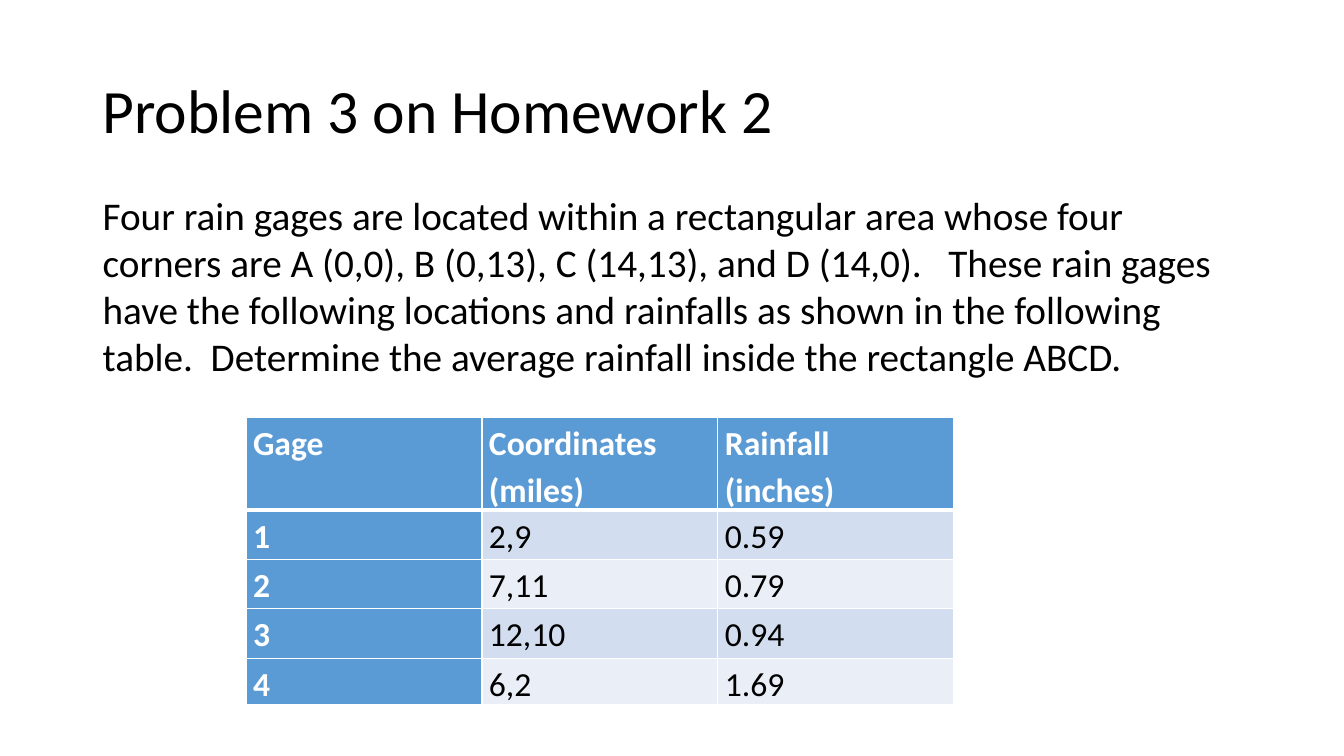
from dataclasses import dataclass

from lxml.etree import SubElement
from pptx import Presentation
from pptx.dml.color import RGBColor
from pptx.enum.text import MSO_ANCHOR as Anchor
from pptx.oxml.ns import qn
from pptx.slide import Slide
from pptx.table import _Cell as Cell
from pptx.text.text import _Paragraph as Paragraph
from pptx.util import Inches, Pt

FONT = "Calibri"
COLORS = {
    "text": "000000",
    "white": "FFFFFF",
    "header": "5B9BD5",
    "odd": "D2DEEF",
    "even": "EAEFF7",
}
GAGES = [
    ("Gage", "Coordinates (miles)", "Rainfall (inches)"),
    ("1", "2,9", "0.59"),
    ("2", "7,11", "0.79"),
    ("3", "12,10", "0.94"),
    ("4", "6,2", "1.69"),
]
COLUMN_WIDTH = 2.34
ROW_HEIGHTS = [0.92, 0.49, 0.49, 0.49, 0.46]


@dataclass
class TextBlock:
    words: str
    top: float
    height: float
    size: int
    anchor: Anchor
    line_spacing: float


BLOCKS = [
    TextBlock("Problem 3 on Homework 2", 0.4, 1.45, 44, Anchor.MIDDLE, 0.9),
    TextBlock(
        "Four rain gages are located within a rectangular area whose four "
        "corners are A (0,0), B (0,13), C (14,13), and D (14,0).   These rain "
        "gages have the following locations and rainfalls as shown in the "
        "following table.  Determine the average rainfall inside the "
        "rectangle ABCD.",
        1.85, 1.99, 28, Anchor.TOP, 1.0,
    ),
]


def add_words(paragraph: Paragraph, words: str, size: int, color: str,
              bold: bool = False) -> None:
    run = paragraph.add_run()
    run.text = words
    run.font.name = FONT
    run.font.size = Pt(size)
    run.font.bold = bold
    run.font.color.rgb = RGBColor.from_string(COLORS[color])


def draw_block(slide: Slide, block: TextBlock) -> None:
    frame = slide.shapes.add_textbox(
        Inches(0.92), Inches(block.top), Inches(11.5), Inches(block.height)
    ).text_frame
    frame.word_wrap = True
    frame.vertical_anchor = block.anchor
    paragraph = frame.paragraphs[0]
    paragraph.line_spacing = block.line_spacing
    add_words(paragraph, block.words, block.size, "text")


def add_borders(cell: Cell, top: int, bottom: int) -> None:
    properties = cell._tc.get_or_add_tcPr()
    for side, width in (("L", 1), ("R", 1), ("T", top), ("B", bottom)):
        line = SubElement(properties, qn(f"a:ln{side}"), w=str(Pt(width)))
        fill = SubElement(line, qn("a:solidFill"))
        SubElement(fill, qn("a:srgbClr"), val=COLORS["white"])


def fill_cell(cell: Cell, words: str, row: int, column: int) -> None:
    is_header = row == 0 or column == 0
    band = "header" if is_header else "odd" if row % 2 else "even"
    add_borders(cell, top=3 if row == 1 else 1, bottom=3 if row == 0 else 1)
    cell.fill.solid()
    cell.fill.fore_color.rgb = RGBColor.from_string(COLORS[band])
    cell.margin_left = cell.margin_right = Inches(0.07)
    cell.margin_top = cell.margin_bottom = 0
    paragraph = cell.text_frame.paragraphs[0]
    paragraph.line_spacing = 1.15
    paragraph.space_after = Pt(10)
    add_words(paragraph, words, 24, "white" if is_header else "text", is_header)


def draw_gages(slide: Slide) -> None:
    columns = len(GAGES[0])
    table = slide.shapes.add_table(
        len(GAGES), columns, Inches(2.44), Inches(4.14),
        Inches(columns * COLUMN_WIDTH), Inches(sum(ROW_HEIGHTS))
    ).table
    table.first_col = True
    for column in table.columns:
        column.width = Inches(COLUMN_WIDTH)
    for row, (gage, height) in enumerate(zip(GAGES, ROW_HEIGHTS)):
        table.rows[row].height = Inches(height)
        for column, words in enumerate(gage):
            fill_cell(table.cell(row, column), words, row, column)


def main() -> None:
    presentation = Presentation()
    presentation.slide_width = Inches(13.33)
    presentation.slide_height = Inches(7.5)
    slide = presentation.slides.add_slide(presentation.slide_layouts[6])
    for block in BLOCKS:
        draw_block(slide, block)
    draw_gages(slide)
    presentation.save("out.pptx")


if __name__ == "__main__":
    main()
